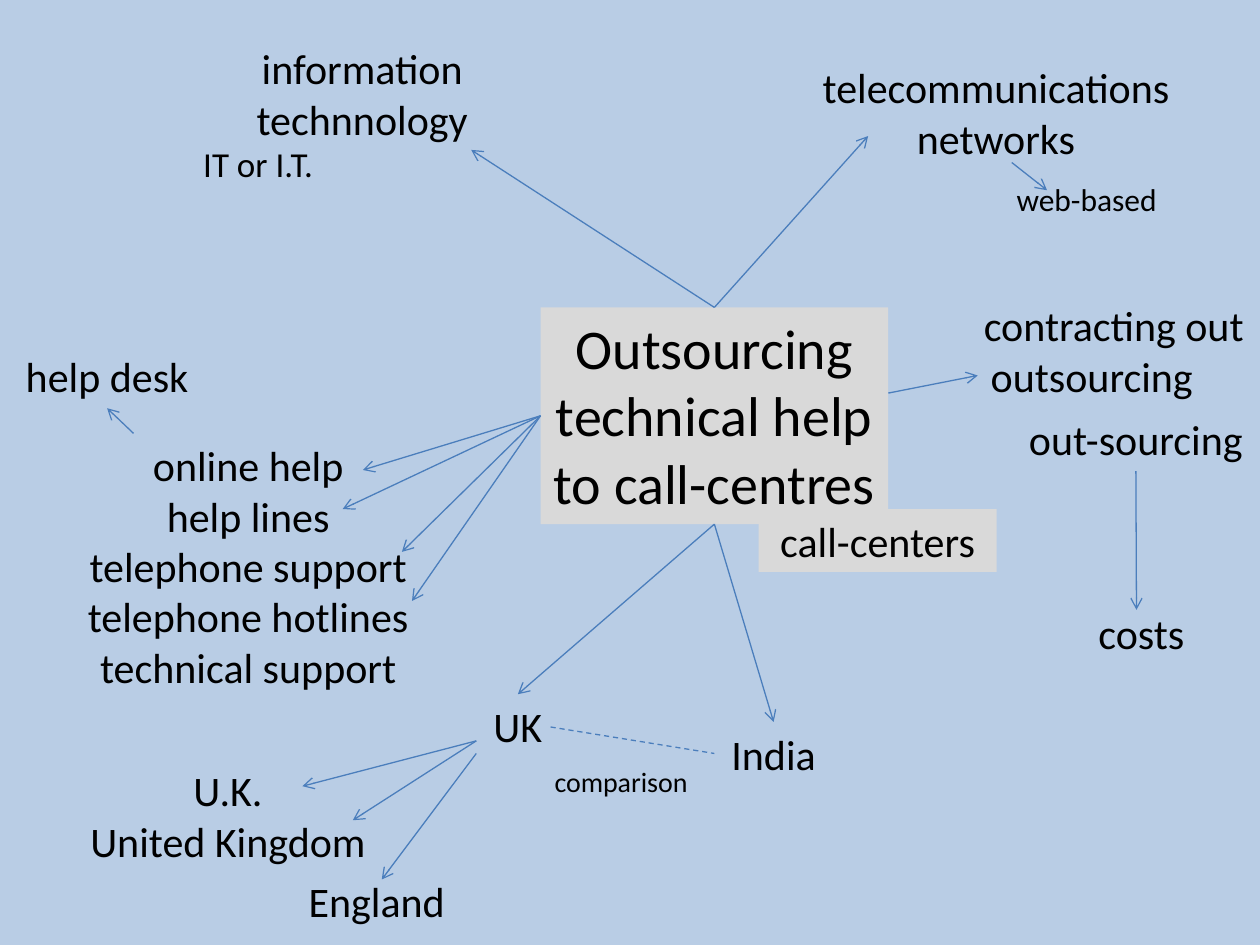
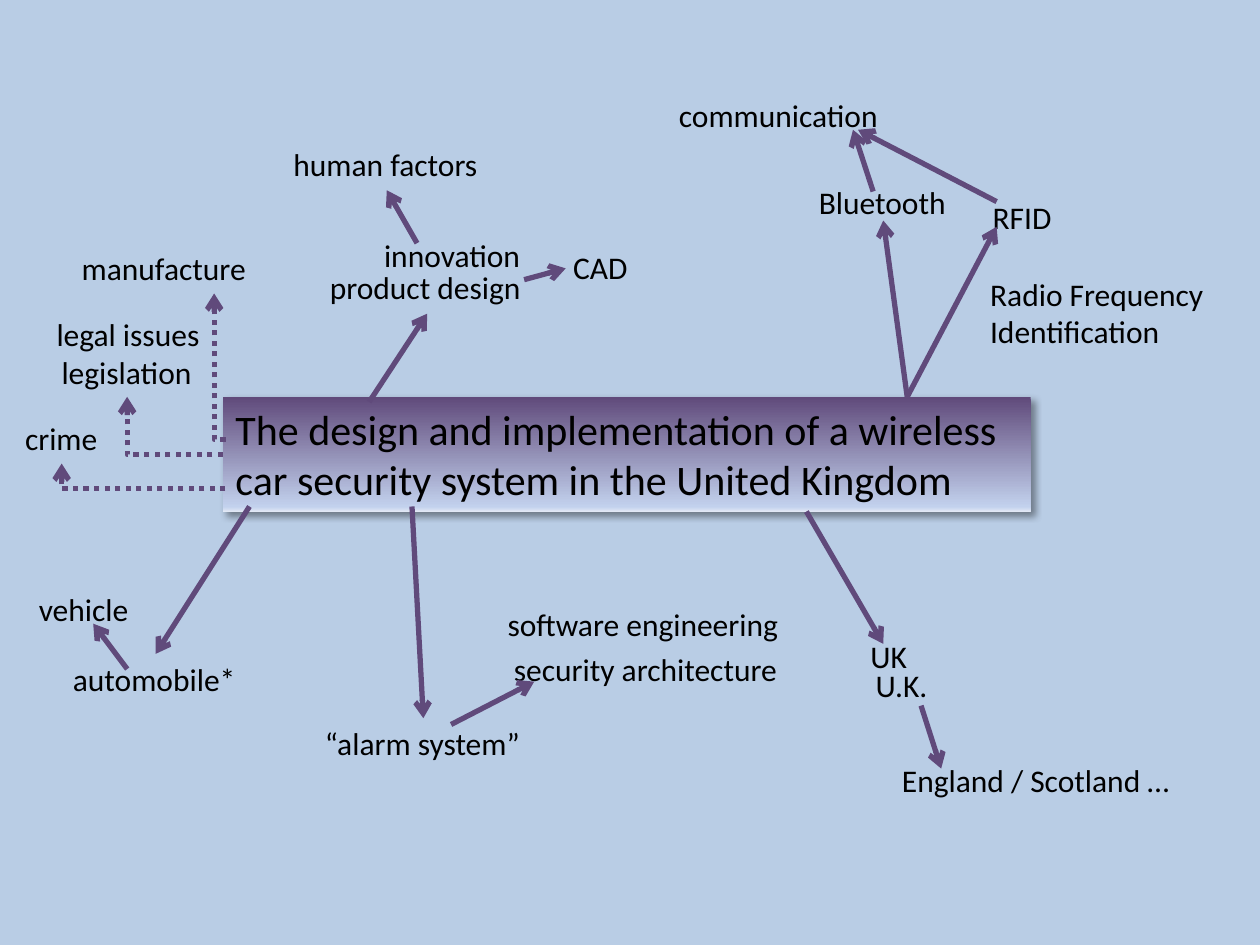
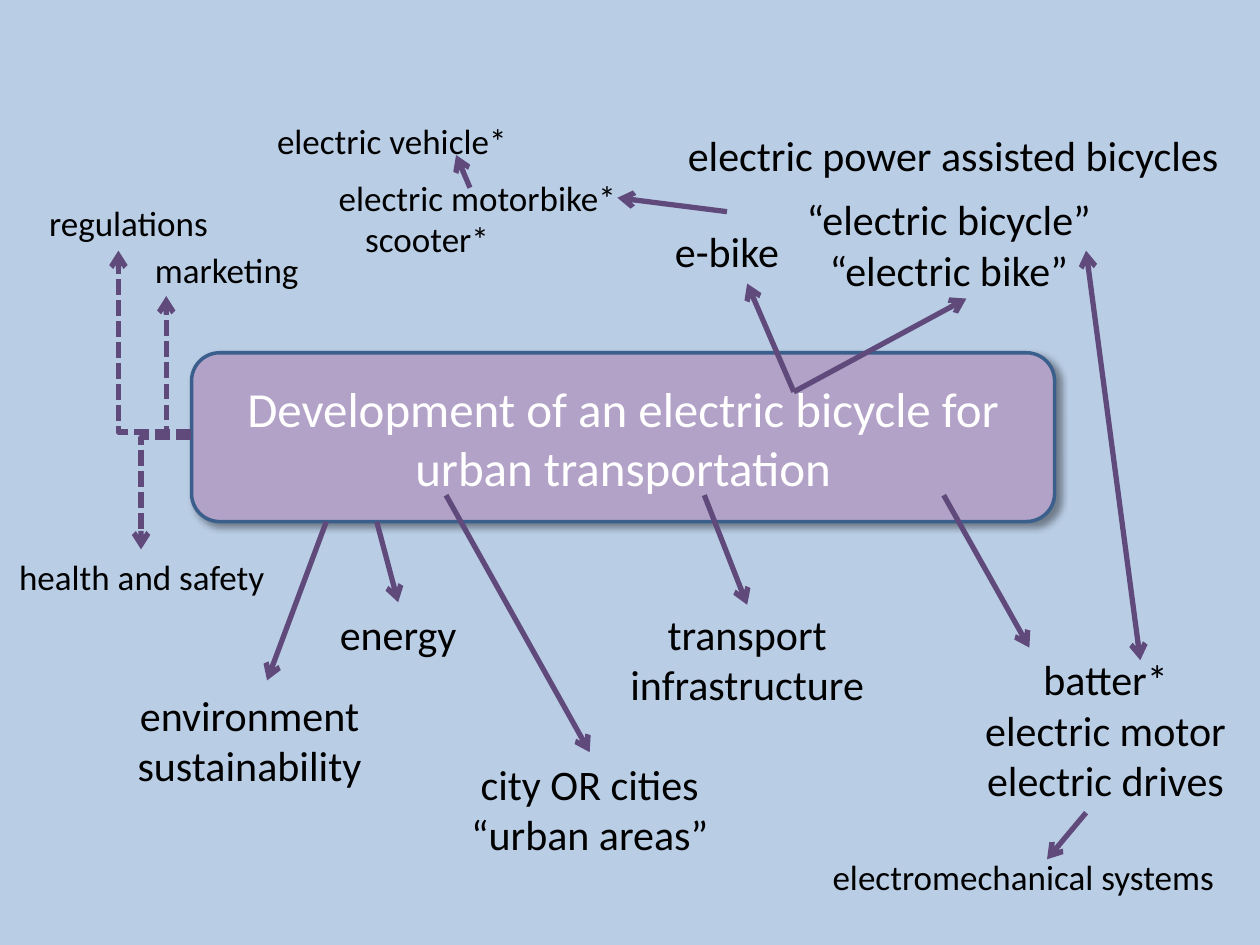
"""Build three mind maps of search terms around a project title."""
from copy import deepcopy
from dataclasses import dataclass

from lxml import etree
from pptx import Presentation
from pptx.dml.color import RGBColor
from pptx.enum.dml import MSO_LINE
from pptx.enum.shapes import MSO_CONNECTOR, MSO_SHAPE
from pptx.enum.text import MSO_ANCHOR, MSO_AUTO_SIZE, PP_ALIGN
from pptx.oxml.ns import qn
from pptx.util import Inches, Pt

LEFT, CENTER = PP_ALIGN.LEFT, PP_ALIGN.CENTER
ANCHOR_TOP, ANCHOR_MIDDLE = MSO_ANCHOR.TOP, MSO_ANCHOR.MIDDLE
GROW = MSO_AUTO_SIZE.SHAPE_TO_FIT_TEXT
STRAIGHT, ELBOW = MSO_CONNECTOR.STRAIGHT, MSO_CONNECTOR.ELBOW
RECTANGLE, ROUNDED = MSO_SHAPE.RECTANGLE, MSO_SHAPE.ROUNDED_RECTANGLE
DASH, SYSTEM_DOT, SYSTEM_DASH = MSO_LINE.DASH, MSO_LINE.ROUND_DOT, MSO_LINE.SQUARE_DOT
TOP_SIDE, LEFT_SIDE, BOTTOM_SIDE = 0, 1, 2


@dataclass(frozen=True)
class Theme:
    """Colours, font, type sizes and line widths of the deck."""
    background: str = "B9CDE5"
    text: str = "000000"
    light_text: str = "FFFFFF"
    panel: str = "D9D9D9"
    lilac: str = "B3A2C7"
    lilac_border: str = "3A5F8C"
    blue_line: str = "4B7EBC"
    purple_line: str = "604A7B"
    gradient: tuple = ((0, "604A7B"), (0.96, "C2D1ED"), (1, "E1E8F5"))
    font: str = "Calibri"
    hero: int = 32
    title: int = 28
    large: int = 24
    medium: int = 20
    small: int = 18
    tiny: int = 16
    thin: float = 0.75
    thick: float = 3
    border: float = 2


THEME = Theme()


def color(value):
    """Return the RGB colour for a hexadecimal string."""
    return RGBColor.from_string(value)


def add_map_slide(presentation):
    """Add a blank slide with the shared background."""
    slide = presentation.slides.add_slide(presentation.slide_layouts[6])
    slide.background.fill.solid()
    slide.background.fill.fore_color.rgb = color(THEME.background)
    return slide


def write_text(shape, text, size=THEME.large, text_color=THEME.text, align=CENTER,
               wrap=True, anchor=ANCHOR_TOP, grow=True):
    """Write one paragraph per line of text into a shape."""
    frame = shape.text_frame
    frame.word_wrap = wrap
    frame.vertical_anchor = anchor
    if grow:
        frame.auto_size = GROW
    frame.text = text
    for paragraph in frame.paragraphs:
        paragraph.alignment = align
        paragraph.font.name = THEME.font
        paragraph.font.size = Pt(size)
        paragraph.font.color.rgb = color(text_color)


def box_height(size, lines):
    """Return the height in inches of a box with this many lines."""
    return round(lines * size * 1.22 / 72 + 0.1, 2)


def add_label(slide, text, left, top, width, size=THEME.large, lines=None, **text_format):
    """Add a text box whose height follows from its lines."""
    height = box_height(size, lines or text.count("\n") + 1)
    label = slide.shapes.add_textbox(Inches(left), Inches(top), Inches(width), Inches(height))
    write_text(label, text, size, **text_format)
    return label


def add_labels(slide, rows, **text_format):
    """Add one label per row and return them by their text."""
    return {row[0]: add_label(slide, *row, **text_format) for row in rows}


def add_panel(slide, kind, left, top, width, height, text, fill=None, **text_format):
    """Add a borderless shape with text and an optional plain fill."""
    panel = slide.shapes.add_shape(kind, Inches(left), Inches(top), Inches(width), Inches(height))
    panel.shadow.inherit = False
    panel.line.fill.background()
    if fill:
        panel.fill.solid()
        panel.fill.fore_color.rgb = color(fill)
    write_text(panel, text, **text_format)
    return panel


def fill_gradient(shape, stops):
    """Fill a shape from top to bottom with the given colour stops."""
    shape.fill.gradient()
    shape.fill.gradient_angle = 270
    stop_list = shape.element.spPr.find(".//" + qn("a:gsLst"))
    while len(stop_list) < len(stops):
        stop_list.append(deepcopy(stop_list[-1]))
    for stop, (position, value) in zip(shape.fill.gradient_stops, stops):
        stop.position = position
        stop.color.rgb = color(value)


def add_shadow(shape):
    """Cast a soft shadow to the lower right of a shape."""
    effects = shape.element.spPr.find(qn("a:effectLst"))
    shadow = etree.SubElement(effects, qn("a:outerShdw"), blurRad=str(Pt(4)),
                              dist=str(Pt(3)), dir="2700000", rotWithShape="0")
    black = etree.SubElement(shadow, qn("a:srgbClr"), val="000000")
    etree.SubElement(black, qn("a:alpha"), val="40000")


def add_line(slide, start, end, line_color=THEME.purple_line, width=THEME.thick,
             kind=STRAIGHT, dash=None, ends=("tailEnd",)):
    """Join two ends, each a point or a shape with the number of its side."""
    joined = [hasattr(place[0], "shape_id") for place in (start, end)]
    points = [(0, 0) if is_joined else place
              for is_joined, place in zip(joined, (start, end))]
    connector = slide.shapes.add_connector(
        kind, *(Inches(value) for point in points for value in point))
    if joined[0]:
        connector.begin_connect(*start)
    if joined[1]:
        connector.end_connect(*end)
    connector.line.color.rgb = color(line_color)
    connector.line.width = Pt(width)
    if dash:
        connector.line.dash_style = dash
    properties = connector.element.spPr
    for name in ends:
        etree.SubElement(properties.find(qn("a:ln")), qn("a:" + name), type="arrow")
    etree.SubElement(properties, qn("a:effectLst"))
    return connector


def add_corner_arrow(slide, start, end, dash):
    """Add an arrow that runs sideways and then turns once."""
    arrow = add_line(slide, start, end, kind=ELBOW, dash=dash)
    arrow.element.spPr.find(qn("a:prstGeom")).set("prst", "bentConnector2")


def build_outsourcing_map(presentation):
    """Build the map about outsourcing technical help."""
    slide = add_map_slide(presentation)
    topic = add_panel(slide, RECTANGLE, 4.29, 2.44, 2.76, 1.72,
                      "Outsourcing\ntechnical help\nto call-centres",
                      fill=THEME.panel, size=THEME.hero)
    add_panel(slide, RECTANGLE, 6.02, 4.04, 1.89, 0.5, "call-centers", fill=THEME.panel)
    labels = add_labels(slide, (
        ("online help\nhelp lines\ntelephone support\ntelephone hotlines\ntechnical support",
         0.59, 3.44, 2.76),
        ("help desk", 0.1, 2.73, 1.5),
        ("out-sourcing", 8.03, 3.23, 1.97),
        ("outsourcing", 7.76, 2.73, 1.81),
        ("contracting out", 7.6, 2.33, 2.48),
        ("costs", 8.31, 4.77, 1.5),
        ("web-based", 7.76, 1.38, 1.73, THEME.small),
        ("telecommunications networks", 6.27, 0.44, 3.27, THEME.large, 2),
        ("comparison", 4.18, 6.02, 1.5, THEME.tiny),
        ("UK", 3.36, 5.51, 1.5),
        ("India", 5.39, 5.73, 1.5),
        ("IT or I.T.", 1.3, 1.08, 1.5, THEME.medium),
        ("information technnology", 1.46, 0.29, 2.83, THEME.large, 2),
        ("U.K.\nUnited Kingdom", 0.43, 6.02, 2.76),
        ("England", 2.24, 6.9, 1.5),
    ))
    thin_blue = {"line_color": THEME.blue_line, "width": THEME.thin}
    for start, end in (
        ((topic, LEFT_SIDE), (2.88, 3.73)),
        ((topic, LEFT_SIDE), (2.72, 4.04)),
        ((topic, LEFT_SIDE), (3.19, 4.38)),
        ((topic, LEFT_SIDE), (3.27, 4.77)),
        ((topic, TOP_SIDE), (6.89, 1.08)),
        ((topic, TOP_SIDE), (3.74, 1.19)),
        ((topic, BOTTOM_SIDE), (labels["UK"], TOP_SIDE)),
        ((topic, BOTTOM_SIDE), (labels["India"], TOP_SIDE)),
        ((labels["out-sourcing"], BOTTOM_SIDE), (9.02, 4.84)),
        ((7.05, 3.12), (7.76, 2.98)),
        ((8.03, 1.29), (8.31, 1.51)),
        ((1.06, 3.44), (labels["help desk"], BOTTOM_SIDE)),
        ((3.78, 5.88), (2.4, 6.24)),
        ((3.78, 5.88), (2.8, 6.51)),
        ((3.78, 5.98), (3.03, 6.98)),
    ):
        add_line(slide, start, end, **thin_blue)
    add_line(slide, (4.37, 5.77), (5.67, 5.98), dash=DASH, ends=(), **thin_blue)


def build_car_security_map(presentation):
    """Build the map about a wireless car security system."""
    slide = add_map_slide(presentation)
    topic = add_panel(slide, RECTANGLE, 1.77, 3.15, 6.41, 0.91,
                      "The design and implementation of a wireless "
                      "car security system in the United Kingdom", align=LEFT)
    fill_gradient(topic, THEME.gradient)
    add_shadow(topic)
    small = THEME.small
    labels = add_labels(slide, (
        ("legal issues", 0.35, 2.45, 1.35, small),
        ("crime", 0.1, 3.28, 0.78, small),
        ("communication", 5.29, 0.71, 1.8, small),
        ("automobile*", 0.48, 5.19, 1.51, small),
        ("security architecture", 3.98, 5.11, 2.31, small),
        ("vehicle", 0.21, 4.63, 0.92, small),
        ("legislation", 0.39, 2.75, 1.25, small),
        ("UK", 6.81, 5.01, 0.49, small),
        ("England / Scotland …", 7.06, 5.99, 2.46, small),
        ("RFID", 7.78, 1.52, 0.67, small),
        ("U.K.", 6.85, 5.24, 0.62, small),
        ("“alarm system”", 2.48, 5.7, 1.76, small),
        ("Bluetooth", 6.4, 1.4, 1.22, small),
        ("manufacture", 0.55, 1.93, 1.52, small),
        ("human factors", 2.23, 1.1, 1.68, small),
        ("product design", 2.52, 2.08, 1.74, small),
        ("innovation", 2.95, 1.82, 1.3, small),
        ("CAD", 4.45, 1.92, 0.64, small),
        ("software engineering", 3.93, 4.75, 2.38, small),
    ), align=LEFT, wrap=False)
    add_label(slide, "Radio Frequency Identification", 7.76, 2.13, 2.03, small, 2, align=LEFT)
    for start, end in (
        ((7.2, 3.15), (7.91, 1.8)),
        ((7.2, 3.15), (7.01, 1.75)),
        ((6.4, 4.06), (7.01, 5.11)),
        ((7.31, 5.6), (7.47, 6.1)),
        ((3.27, 4.02), (labels["“alarm system”"], TOP_SIDE)),
        ((1.98, 4.02), (labels["automobile*"], TOP_SIDE)),
        ((6.93, 1.52), (6.77, 1.03)),
        ((7.91, 1.6), (6.81, 1.03)),
        ((1.01, 5.31), (0.74, 4.95)),
        ((3.58, 5.75), (4.24, 5.41)),
        ((4.16, 2.22), (4.49, 2.13)),
        ((2.93, 3.19), (labels["product design"], BOTTOM_SIDE)),
        ((3.31, 1.93), (labels["human factors"], BOTTOM_SIDE)),
    ):
        add_line(slide, start, end)
    for start, end in (
        ((1.77, 3.61), (1.01, 3.15)),
        ((1.79, 3.88), (0.49, 3.68)),
        ((1.79, 3.49), (1.7, 2.33)),
    ):
        add_corner_arrow(slide, start, end, SYSTEM_DOT)


def build_electric_bicycle_map(presentation):
    """Build the map about an electric bicycle."""
    slide = add_map_slide(presentation)
    topic = add_panel(slide, ROUNDED, 1.52, 2.8, 6.85, 1.34,
                      "Development of an electric bicycle for urban transportation",
                      fill=THEME.lilac, size=THEME.title, text_color=THEME.light_text,
                      anchor=ANCHOR_MIDDLE, grow=False)
    topic.line.color.rgb = color(THEME.lilac_border)
    topic.line.width = Pt(THEME.border)
    add_shadow(topic)
    medium = THEME.medium
    labels = add_labels(slide, (
        ("city OR cities\n“urban areas”", 3.63, 5.97, 2.1),
        ("regulations", 0.28, 1.55, 1.48, medium),
        ("health and safety", 0.04, 4.36, 2.17, medium),
        ("transport\ninfrastructure", 4.89, 4.78, 2.08),
        ("electric power assisted bicycles", 5.34, 0.98, 4.45),
        ("batter*\nelectric motor\nelectric drives", 7.71, 5.14, 2.13),
        ("“electric bicycle”\n“electric bike”", 6.29, 1.49, 2.48),
        ("e-bike", 5.25, 1.74, 1.04),
        ("environment\nsustainability", 0.97, 5.42, 2.02),
        ("energy", 2.59, 4.78, 1.14),
        ("marketing", 1.12, 1.92, 1.36, medium),
    ), wrap=False)
    add_labels(slide, (
        ("electric motorbike*", 2.59, 1.35, 2.43, medium),
        ("electric vehicle*", 2.1, 0.9, 2.05, medium),
        ("electromechanical systems", 6.51, 6.74, 3.26, medium),
        ("scooter*", 2.8, 1.68, 1.19, medium),
    ), align=LEFT, wrap=False)
    for start, end in (
        ((3.54, 3.93), (labels["city OR cities\n“urban areas”"], TOP_SIDE)),
        ((2.59, 4.14), (2.12, 5.4)),
        ((5.59, 3.93), (5.93, 4.8)),
        ((7.49, 3.93), (8.17, 5.14)),
        ((6.3, 3.11), (7.67, 2.37)),
        ((6.3, 3.11), (5.93, 2.25)),
        ((5.77, 1.68), (4.9, 1.57)),
        ((2.99, 4.14), (labels["energy"], TOP_SIDE)),
        ((3.73, 1.49), (3.62, 1.23)),
        ((8.62, 6.45), (8.31, 6.82)),
    ):
        add_line(slide, start, end)
    add_line(slide, (8.62, 1.99), (9.05, 5.24), ends=("headEnd", "tailEnd"))
    for start, end in (
        ((1.52, 3.43), (0.94, 1.99)),
        ((1.52, 3.47), (1.12, 4.36)),
        ((1.52, 3.47), (1.32, 2.35)),
    ):
        add_corner_arrow(slide, start, end, SYSTEM_DASH)


def main():
    """Build the three maps and save the presentation."""
    presentation = Presentation()
    presentation.slide_width = Inches(10)
    presentation.slide_height = Inches(7.5)
    build_outsourcing_map(presentation)
    build_car_security_map(presentation)
    build_electric_bicycle_map(presentation)
    presentation.save("out.pptx")


if __name__ == "__main__":
    main()
